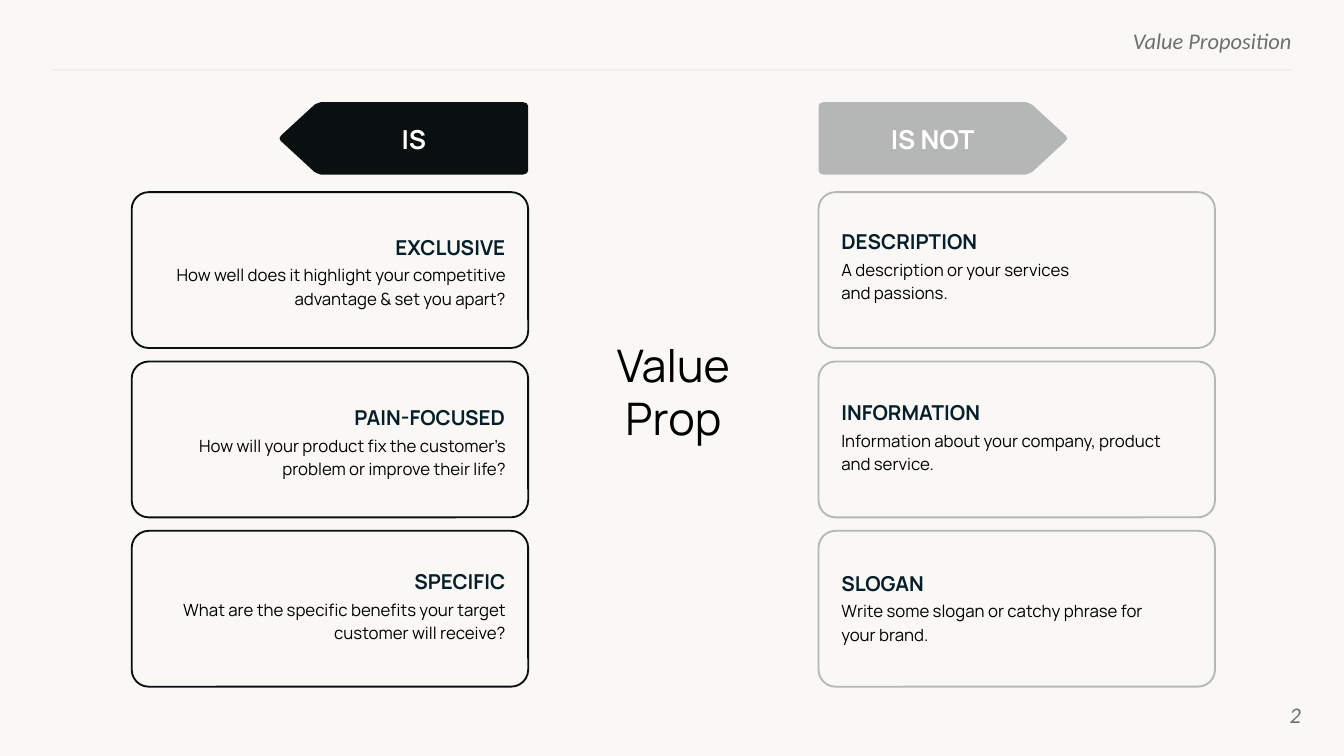
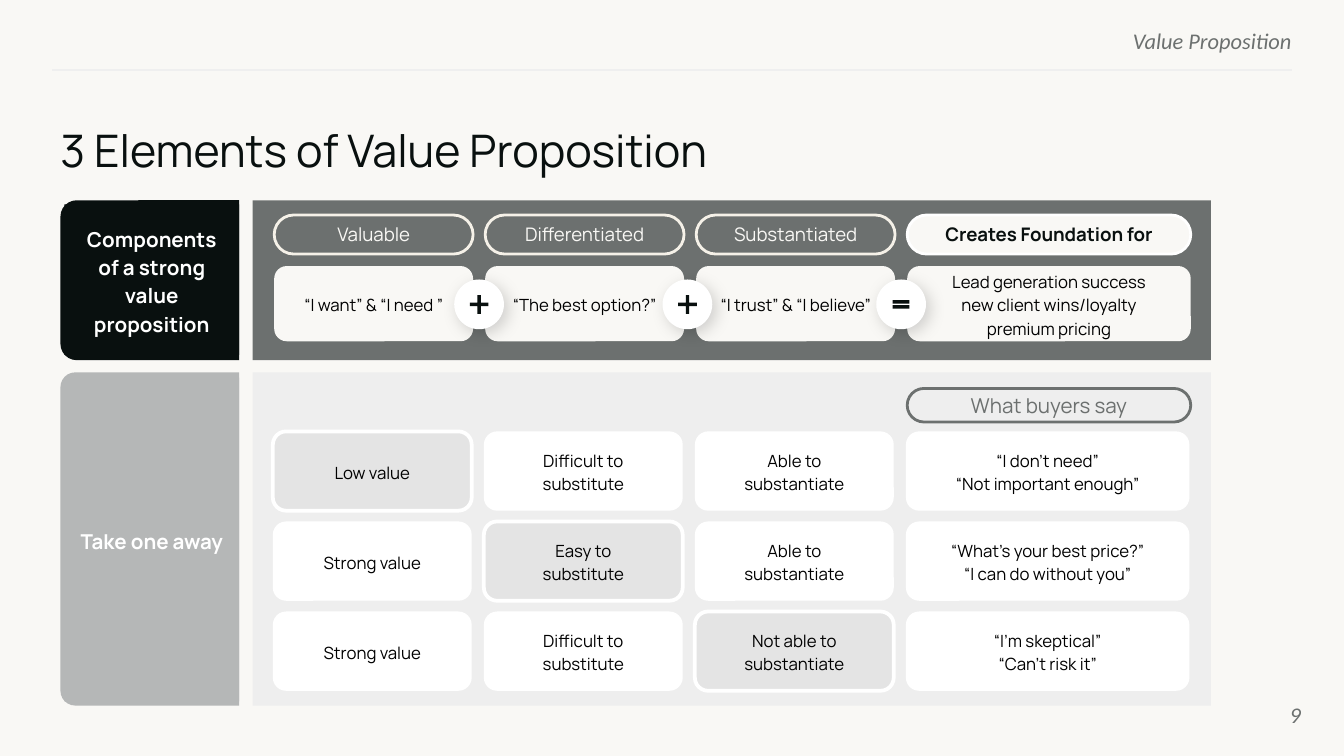
from copy import deepcopy

from lxml import etree
from pptx import Presentation
from pptx import util as u
from pptx.dml.color import RGBColor
from pptx.enum import shapes, text
from pptx.oxml.ns import qn

COLORS = {
    "paper": "F9F8F5", "ink": "09100F", "black": "000000", "white": "FFFFFF",
    "gray": "6C706F", "silver": "B5B7B7", "rule": "EFEFEF", "panel": "EEEEEE",
    "cream": "F5F1E8", "navy": "051E2A", "missing": "BFBFBF",
}
KIND = shapes.MSO_SHAPE
LEFT, CENTER, RIGHT = text.PP_ALIGN.LEFT, text.PP_ALIGN.CENTER, text.PP_ALIGN.RIGHT
TIGHT = (0.03, 0.03)
ROOMY = (0.1, 0.05)
HEADER = {"size": 12, "name": "Calibri", "color": "gray", "italic": True}
TITLE = {"size": 24, "color": "ink"}
HEADING = {"size": 11, "color": "navy", "bold": True}
BODY = {"size": 9, "color": "black"}
PILL = {"size": 10, "color": "paper"}
SIDE = {"size": 11, "color": "white", "bold": True}


def draw(page, kind, at, fill=None, line=None, weight=1, adjust=()):
    place = [u.Inches(value) for value in at]
    if kind is None:
        return page.shapes.add_textbox(*place)
    shape = page.shapes.add_shape(kind, *place)
    shape.shadow.inherit = False
    for index, value in enumerate(adjust):
        shape.adjustments[index] = value
    if fill:
        shape.fill.solid()
        shape.fill.fore_color.rgb = RGBColor.from_string(COLORS[fill])
    else:
        shape.fill.background()
    if line:
        shape.line.color.rgb = RGBColor.from_string(COLORS[line])
        shape.line.width = u.Pt(weight)
    else:
        shape.line.fill.background()
    return shape


def write(box, words, style, align=CENTER, inset=ROOMY, spacing=None, middle=True):
    frame = box.text_frame
    side, edge = (u.Inches(value) for value in inset)
    settings = {
        "word_wrap": True, "margin_left": side, "margin_right": side,
        "margin_top": edge, "margin_bottom": edge,
        "vertical_anchor": text.MSO_ANCHOR.MIDDLE if middle else text.MSO_ANCHOR.TOP,
    }
    for name, value in settings.items():
        setattr(frame, name, value)
    looks = {"name": "Manrope", **style}
    color = RGBColor.from_string(COLORS[looks.pop("color")])
    looks["size"] = u.Pt(looks["size"])
    lines = [words] if isinstance(words, str) else words
    for index, line in enumerate(lines):
        para = frame.paragraphs[0] if index == 0 else frame.add_paragraph()
        para.text = line
        para.alignment = align
        if spacing:
            para.line_spacing = spacing
        for span in para.runs:
            for name, value in looks.items():
                setattr(span.font, name, value)
            span.font.color.rgb = color
        for gap in para._p.findall(qn("a:br")):
            gap.insert(0, deepcopy(para.runs[0]._r.rPr))


deck = Presentation()
deck.slide_width = u.Inches(10)
deck.slide_height = deck.slide_width * 9 // 16
pages = []
for number in ("2", "9"):
    page = deck.slides.add_slide(deck.slide_layouts[6])
    page.background.fill.solid()
    page.background.fill.fore_color.rgb = RGBColor.from_string(COLORS["paper"])
    write(draw(page, None, (5.76, 0.2, 3.85, 0.18)), "Value Proposition", HEADER,
          RIGHT, (0, 0), middle=False)
    rule = page.shapes.add_connector(shapes.MSO_CONNECTOR.STRAIGHT, u.Inches(9.61),
                                     u.Inches(0.52), u.Inches(0.39), u.Inches(0.52))
    rule.line.color.rgb = RGBColor.from_string(COLORS["rule"])
    rule.line.width = u.Pt(0.75)
    etree.SubElement(rule._element.spPr, qn("a:effectLst"))
    write(draw(page, None, (9.08, 5.1, 0.6, 0.43)), number, HEADER, RIGHT, (0, 0))
    pages.append(page)
is_page, elements_page = pages

ARROW = [(159, 2), (184, 25), (185, 27), (184, 29), (159, 52), (157, 53), (154, 54),
         (4, 54), (1, 53), (0, 51), (0, 3), (1, 1), (4, 0), (154, 0), (157, 1)]
sides = [
    ("IS", "ink", 393, -1, 0.98, 2.58, RIGHT, [
        ("EXCLUSIVE", 1.69, 2.7,
         "How well does it highlight your competitive advantage & set you apart?"),
        ("PAIN-FOCUSED", 2.96, 2.65,
         "How will your product fix the customer’s problem or improve their life?"),
        ("SPECIFIC", 4.18, 2.87,
         "What are the specific benefits your target customer will receive?")]),
    ("IS NOT", "silver", 609, 1, 6.09, 6.44, LEFT, [
        ("DESCRIPTION", 1.65, 2.65, ["A description or your services", "and passions."]),
        ("INFORMATION", 2.92, 2.48, "Information about your company, product and service."),
        ("SLOGAN", 4.19, 2.4, "Write some slogan or catchy phrase for your brand.")]),
]
for label, color, base, direction, card_left, label_left, align, cards in sides:
    points = [(base + direction * x, 76 + y) for x, y in ARROW]
    builder = is_page.shapes.build_freeform(*points[0], scale=u.Inches(0.01))
    builder.add_line_segments(points[1:], close=True)
    arrow = builder.convert_to_shape()
    arrow.shadow.inherit = False
    arrow.fill.solid()
    arrow.fill.fore_color.rgb = RGBColor.from_string(COLORS[color])
    arrow.line.fill.background()
    write(draw(is_page, KIND.RECTANGLE, (label_left, 0.89, 1, 0.29), color), label,
          {"size": 14, "color": "white", "bold": True}, inset=TIGHT, middle=False)
    for row, (heading, top, width, body) in enumerate(cards):
        draw(is_page, KIND.ROUNDED_RECTANGLE, (card_left, 1.43 + 1.26 * row, 2.95, 1.16),
             "paper", color, adjust=[0.109])
        for words, style, y, wide, high in ((heading, HEADING, top, 1.4, 0.24),
                                            (body, BODY, top + 0.23, width, 0.38)):
            x = 3.79 - wide if align == RIGHT else 6.23
            write(draw(is_page, None, (x, y, wide, high)), words, style, align, TIGHT,
                  1.15, middle=False)
write(draw(is_page, None, (3.9, 2.48, 2.22, 0.86)), ["Value", "Prop"],
      {"size": 24, "color": "black"}, inset=TIGHT, middle=False)

write(draw(elements_page, None, (0.45, 0.91, 9.23, 0.51)),
      "3 Elements of Value Proposition", TITLE, LEFT, (0, 0), middle=False)
bands = [
    (1.49, 1.19, 1.52, "ink", "gray", 0.102, "Components of a strong value proposition"),
    (2.77, 2.48, 2.81, "silver", "panel", 0.083, "Take one away"),
]
for top, height, label_top, side_color, panel_color, radius, label in bands:
    draw(elements_page, KIND.RECTANGLE, (1.88, top, 7.13, height), panel_color)
    shift = (height - 1.33) / 2
    tab = draw(elements_page, KIND.ROUND_2_SAME_RECTANGLE,
               (0.45 - shift, top + shift, height, 1.33), side_color, adjust=[radius, 0])
    tab.rotation = 270
    write(draw(elements_page, KIND.RECTANGLE, (0.48, label_top, 1.3, height - 0.07),
               side_color), label, SIDE, spacing=1.15)

columns = [(2.04 + 1.57 * index, 1.48 if index < 3 else 2.11) for index in range(4)]
components = [
    ("Valuable", "“I want” & “I need ”"),
    ("Differentiated", "“The best option?”"),
    ("Substantiated", "“I trust” & “I believe”"),
    ("Creates Foundation for",
     "Lead generation success\nnew client wins/loyalty\npremium pricing"),
]
for (left, width), (name, meaning) in zip(columns, components):
    result = name == components[-1][0]
    pill = draw(elements_page, KIND.ROUNDED_RECTANGLE, (left, 1.6, width, 0.29),
                "paper" if result else None, "white" if result else "cream", 1.5, [0.5])
    write(pill, name, {**PILL, "color": "ink", "bold": True} if result else PILL)
    write(draw(elements_page, KIND.ROUNDED_RECTANGLE, (left, 1.98, width, 0.56), "paper",
               adjust=[0.167]), meaning, BODY, spacing=1.15)

outcomes = [
    ("Low value", "Difficult to\nsubstitute", "Able to\nsubstantiate",
     "“I don’t need”\n“Not important enough”"),
    ("Strong value", "Easy to\nsubstitute", "Able to\nsubstantiate",
     "“What’s your best price?”\n“I can do without you”"),
    ("Strong value", "Difficult to\nsubstitute", "Not able to\nsubstantiate",
     "“I’m skeptical”\n“Can’t risk it”"),
]
for row, cells in enumerate(outcomes):
    for column, words in enumerate(cells):
        left, width = columns[column]
        missing = row == column
        cell = draw(elements_page, KIND.ROUNDED_RECTANGLE,
                    (left - 0.01, 3.21 + 0.67 * row, width, 0.59),
                    "missing" if missing else "white", "white" if missing else None, 2,
                    [0.167])
        if missing:
            tint = cell._element.spPr.find(qn("a:solidFill"))[0]
            etree.SubElement(tint, qn("a:alpha"), val="21000")
        write(cell, words, BODY, spacing=1.15)
write(draw(elements_page, KIND.ROUNDED_RECTANGLE, (6.75, 2.89, 2.11, 0.25), None, "gray",
           1.5, [0.5]), "What buyers say", {"size": 11, "color": "gray"})

signs = [
    (3.38, KIND.MATH_PLUS, 0.19, 0.19, [0.133]),
    (4.93, KIND.MATH_PLUS, 0.19, 0.19, [0.133]),
    (6.52, KIND.MATH_EQUAL, 0.17, 0.11, [0.235, 0.118]),
]
for left, sign, width, height, adjust in signs:
    disc = draw(elements_page, KIND.OVAL, (left, 2.08, 0.37, 0.37), "white")
    effects = disc._element.spPr.find(qn("a:effectLst"))
    shadow = etree.SubElement(effects, qn("a:outerShdw"), blurRad=str(u.Pt(8.7)),
                              dist=str(u.Pt(3)), dir="2700000", algn="tl", rotWithShape="0")
    shade = etree.SubElement(shadow, qn("a:srgbClr"), val=COLORS["black"])
    etree.SubElement(shade, qn("a:alpha"), val="17000")
    draw(elements_page, sign, (left + (0.37 - width) / 2, 2.08 + (0.37 - height) / 2,
                               width, height), "ink", adjust=adjust)

deck.save("out.pptx")
